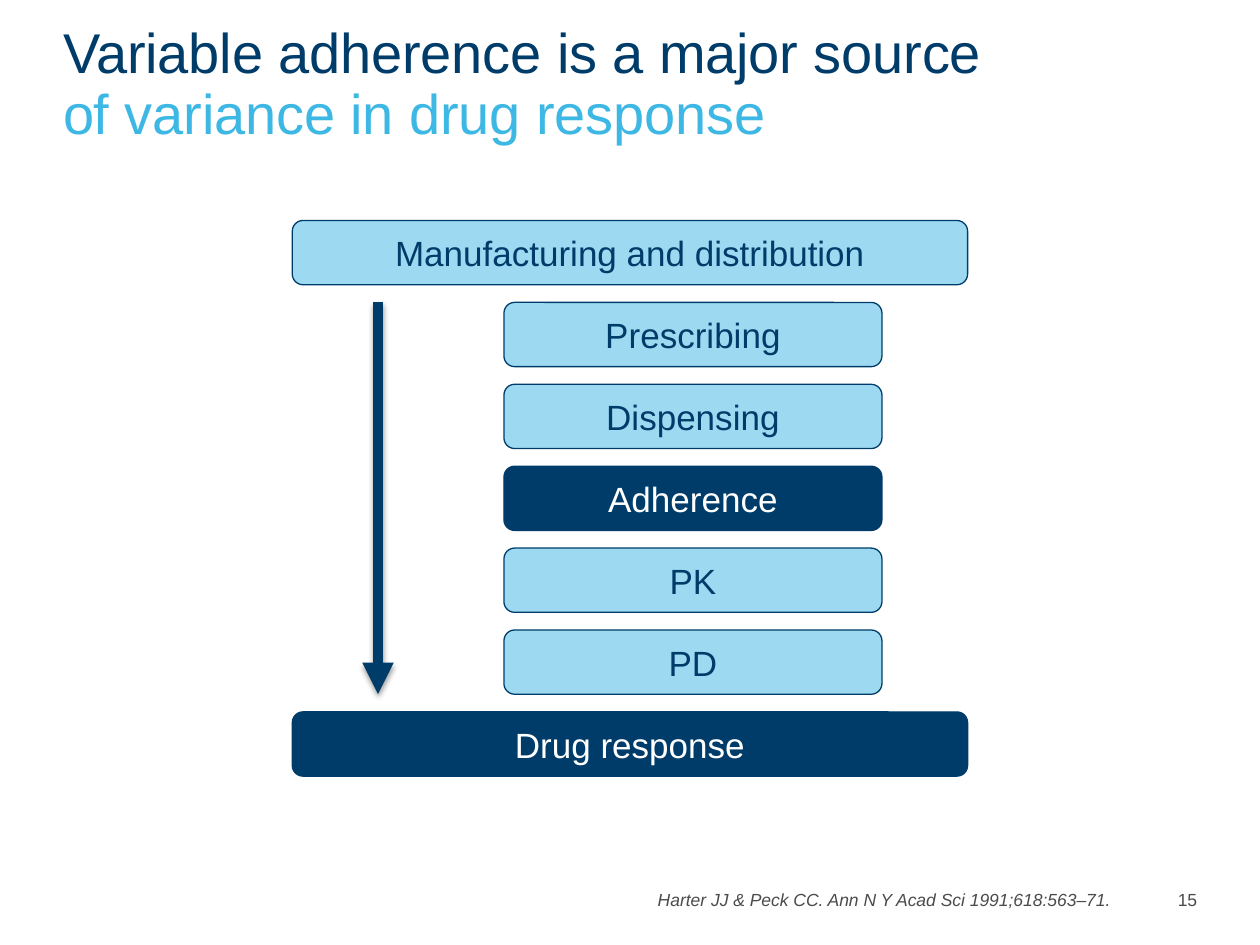
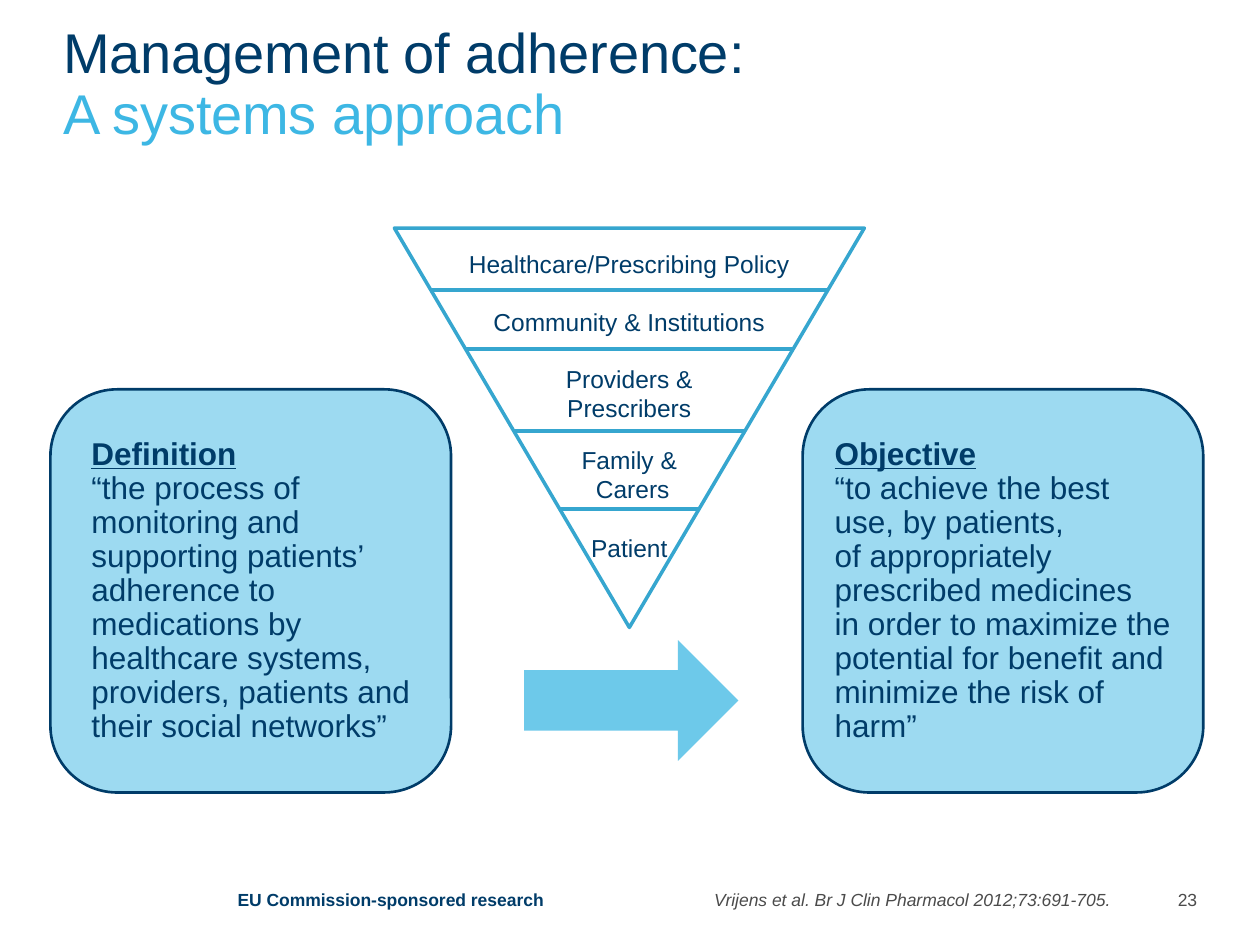
from dataclasses import dataclass

from lxml import etree
from pptx import Presentation
from pptx.dml.color import RGBColor
from pptx.enum.shapes import MSO_CONNECTOR, MSO_SHAPE
from pptx.enum.text import MSO_ANCHOR, PP_ALIGN
from pptx.oxml.ns import qn
from pptx.util import Inches, Pt

ROUNDED = MSO_SHAPE.ROUNDED_RECTANGLE
TRIANGLE = MSO_SHAPE.ISOSCELES_TRIANGLE
RIGHT_ARROW = MSO_SHAPE.RIGHT_ARROW
STRAIGHT = MSO_CONNECTOR.STRAIGHT
TOP, MIDDLE = MSO_ANCHOR.TOP, MSO_ANCHOR.MIDDLE
LEFT, CENTER, RIGHT = PP_ALIGN.LEFT, PP_ALIGN.CENTER, PP_ALIGN.RIGHT
TITLE_ONLY = 5


@dataclass(frozen=True)
class Theme:
    font: str = "Arial"
    navy: str = "003C69"
    sky: str = "3DB7E4"
    outline: str = "36A6CF"
    grey: str = "4B4B4B"
    white: str = "FFFFFF"
    title_size: int = 32
    step_size: int = 20
    panel_size: int = 18
    tier_size: int = 14
    footer_size: int = 10
    tight: float = 0.9


THEME = Theme()


# Shared helpers
def color(value):
    return RGBColor.from_string(value)


def style_span(span, size, ink, bold=False, italic=False, underline=False):
    font = span.font
    font.name, font.size = THEME.font, Pt(size)
    font.color.rgb = color(ink)
    font.bold, font.italic, font.underline = bold, italic, underline


def style_text(frame, size, ink, align, spacing=None, **emphasis):
    for para in frame.paragraphs:
        para.alignment = align
        if spacing:
            para.line_spacing = spacing
        for span in para.runs:
            style_span(span, size, ink, **emphasis)


def add_label(page, box, text, size, ink, align, **emphasis):
    label = page.shapes.add_textbox(*map(Inches, box))
    frame = label.text_frame
    frame.word_wrap = False
    frame.text = text
    style_text(frame, size, ink, align, **emphasis)


def add_block(page, kind, box, fill, opacity=100, line=None, width=0.75):
    block = page.shapes.add_shape(kind, *map(Inches, box))
    block.shadow.inherit = False
    block.fill.solid()
    block.fill.fore_color.rgb = color(fill)
    if opacity < 100:
        ink = block.element.spPr.find(qn("a:solidFill"))[0]
        etree.SubElement(ink, qn("a:alpha"), val=str(opacity * 1000))
    if line:
        block.line.color.rgb = color(line)
        block.line.width = Pt(width)
    else:
        block.line.fill.background()
    return block


def add_line(page, start, end, ink, width):
    """Draw a straight line and return it with its empty effect list."""
    line = page.shapes.add_connector(STRAIGHT, *map(Inches, start + end))
    line.line.color.rgb = color(ink)
    line.line.width = Pt(width)
    effects = etree.SubElement(line.element.spPr, qn("a:effectLst"))
    return line, effects


def add_page(deck, title, citation, number):
    page = deck.slides.add_slide(deck.slide_layouts[TITLE_ONLY])

    # Two-tone title
    heading = page.shapes.title
    heading.left, heading.top = Inches(0.5), Inches(0.2)
    heading.width, heading.height = Inches(9.2), Inches(0.8)
    frame = heading.text_frame
    frame.margin_left = frame.margin_top = frame.margin_right = frame.margin_bottom = 0
    frame.vertical_anchor = TOP
    frame.word_wrap = True
    frame.text = "\v".join(title)
    style_text(frame, THEME.title_size, THEME.navy, LEFT, THEME.tight)
    first, second = frame.paragraphs[0].runs
    second.font.color.rgb = color(THEME.sky)
    for span in (first, second):
        span.font._element.set("spc", "-10")

    # Citation and page number
    add_label(page, (5.08, 7.01, 3.83, 0.27), citation,
              THEME.footer_size, THEME.grey, RIGHT, italic=True)
    add_label(page, (9.17, 7.01, 0.43, 0.25), str(number),
              THEME.footer_size, THEME.grey, RIGHT)
    return page


# Slide 1: steps from manufacturing to response
def add_steps(page, box):
    left, top, width, _ = box
    steps = ("Manufacturing and distribution", "Prescribing", "Dispensing",
             "Adherence", "PK", "PD", "Drug response")
    highlighted = ("Adherence", "Drug response")
    pitch, height = 0.65, 0.51
    for index, step in enumerate(steps):
        outer = index in (0, len(steps) - 1)
        place = (left if outer else left + 1.68, top + index * pitch,
                 width if outer else 3, height)
        dark = step in highlighted
        block = add_block(page, ROUNDED, place, THEME.navy if dark else THEME.sky,
                          100 if dark else 50, THEME.navy)
        frame = block.text_frame
        frame.text = step
        frame.vertical_anchor = MIDDLE
        style_text(frame, THEME.step_size, THEME.white if dark else THEME.navy, CENTER)

    # Downward arrow beside the inner steps
    x = left + 0.68
    end = top + (len(steps) - 2) * pitch + height
    arrow, effects = add_line(page, (x, top + pitch), (x, end), THEME.navy, 6)
    etree.SubElement(arrow.line._get_or_add_ln(), qn("a:tailEnd"), type="triangle")
    shadow = etree.SubElement(effects, qn("a:outerShdw"), blurRad=str(Pt(3.1)),
                              dist=str(Pt(1.6)), dir="5400000", rotWithShape="0")
    shade = etree.SubElement(shadow, qn("a:srgbClr"), val="000000")
    etree.SubElement(shade, qn("a:alpha"), val="38000")


# Slide 2: inverted pyramid of stakeholders
def add_pyramid(page, box):
    left, top, width, height = box
    center = left + width / 2
    pyramid = add_block(page, TRIANGLE, box, THEME.white, line=THEME.outline, width=2)
    pyramid.rotation = 180

    # Label, its top and the divider below it, measured from the pyramid's top
    tiers = (("Healthcare/Prescribing Policy", 0.12, 0.49),
             ("Community & Institutions", 0.58, 0.96),
             ("Providers &\nPrescribers", 1.03, 1.61),
             ("Family &\n Carers", 1.67, 2.23),
             ("Patient", 2.37, None))
    for text, label_top, divider in tiers:
        if divider:
            half = width / 2 * (1 - divider / height)
            y = top + divider
            add_line(page, (center - half, y), (center + half, y), THEME.outline, 2)
        label_height = 0.51 if "\n" in text else 0.3
        add_label(page, (left, top + label_top, width, label_height), text,
                  THEME.tier_size, THEME.navy, CENTER)


def add_panel(page, box, heading, quote, inset):
    panel = add_block(page, ROUNDED, box, THEME.sky, 50, THEME.navy, 1.5)
    frame = panel.text_frame
    frame.vertical_anchor = MIDDLE
    frame.margin_left = Inches(inset)
    frame.margin_right = Inches(0.05)
    frame.margin_top = frame.margin_bottom = Inches(0.1)
    frame.text = f"{heading}\n{quote}"
    style_text(frame, THEME.panel_size, THEME.navy, LEFT, THEME.tight)
    style_span(frame.paragraphs[0].runs[0], THEME.panel_size, THEME.navy,
               bold=True, underline=True)


def build_variance_page(deck):
    page = add_page(deck, ("Variable adherence is a major source",
                           "of variance in drug response"),
                    "Harter JJ & Peck CC. Ann N Y Acad Sci 1991;618:563–71.", 15)
    add_steps(page, (2.32, 1.75, 5.36, 4.41))


def build_management_page(deck):
    page = add_page(deck, ("Management of adherence:", "A systems approach"),
                    "Vrijens et al. Br J Clin Pharmacol 2012;73:691-705.", 23)
    add_pyramid(page, (3.13, 1.81, 3.73, 3.17))
    add_panel(page, (0.4, 3.09, 3.18, 3.2), "Definition",
              "“the process of monitoring and supporting patients’ adherence to "
              "medications by\vhealthcare systems, providers, patients and their "
              "social networks”", 0.17)
    add_panel(page, (6.37, 3.09, 3.18, 3.2), "Objective",
              "“to achieve the best use, by patients,\vof appropriately prescribed "
              "medicines\vin order to maximize the potential for benefit and "
              "minimize the risk of harm”", 0.1)
    add_block(page, RIGHT_ARROW, (4.16, 5.08, 1.7, 0.96), THEME.sky, 75)
    add_label(page, (1.77, 7.03, 2.66, 0.25), "EU Commission-sponsored research",
              THEME.footer_size, THEME.navy, CENTER, spacing=0.86, bold=True)


def main():
    deck = Presentation()
    deck.slide_width, deck.slide_height = Inches(10), Inches(7.5)
    build_variance_page(deck)
    build_management_page(deck)
    deck.save("out.pptx")


if __name__ == "__main__":
    main()
